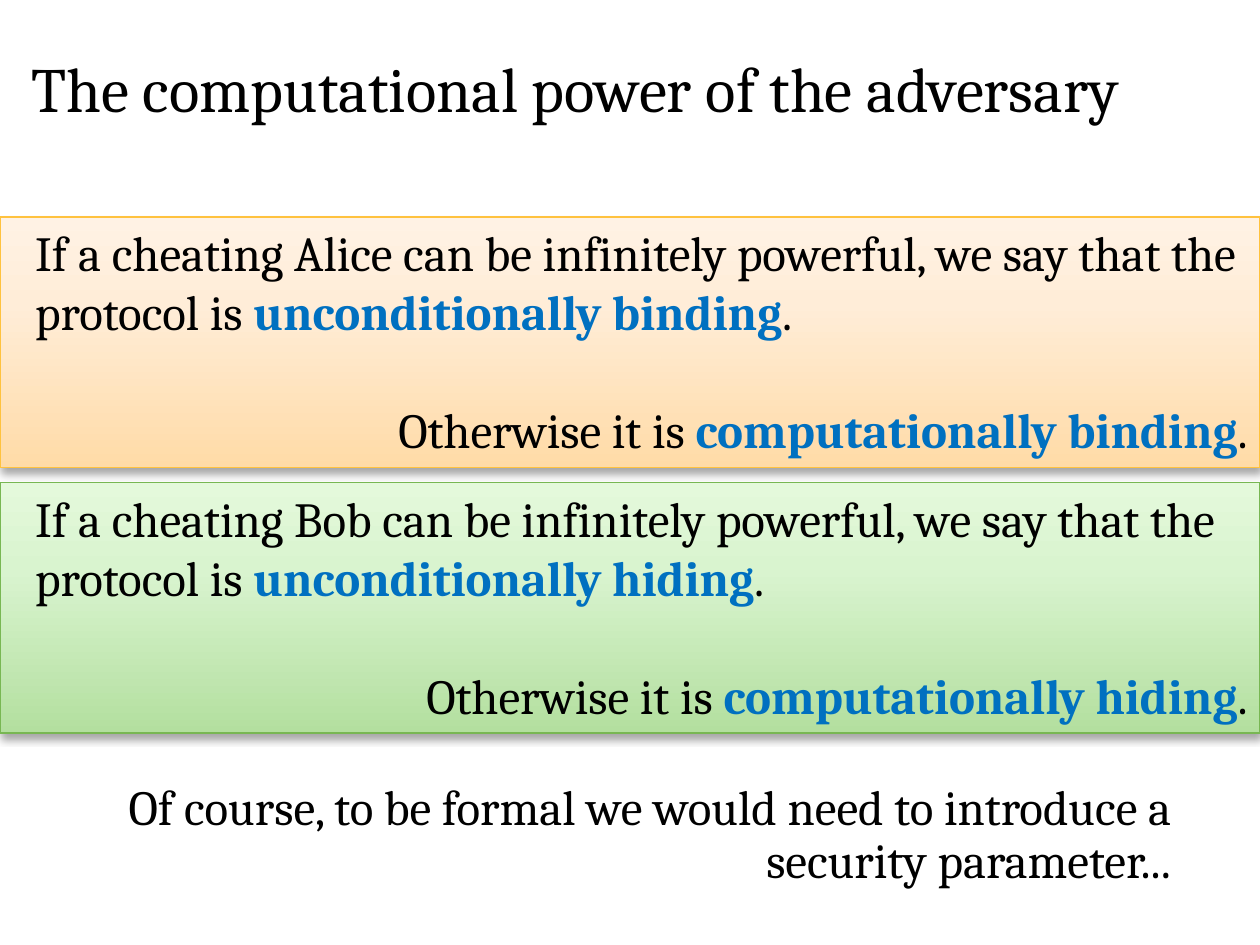
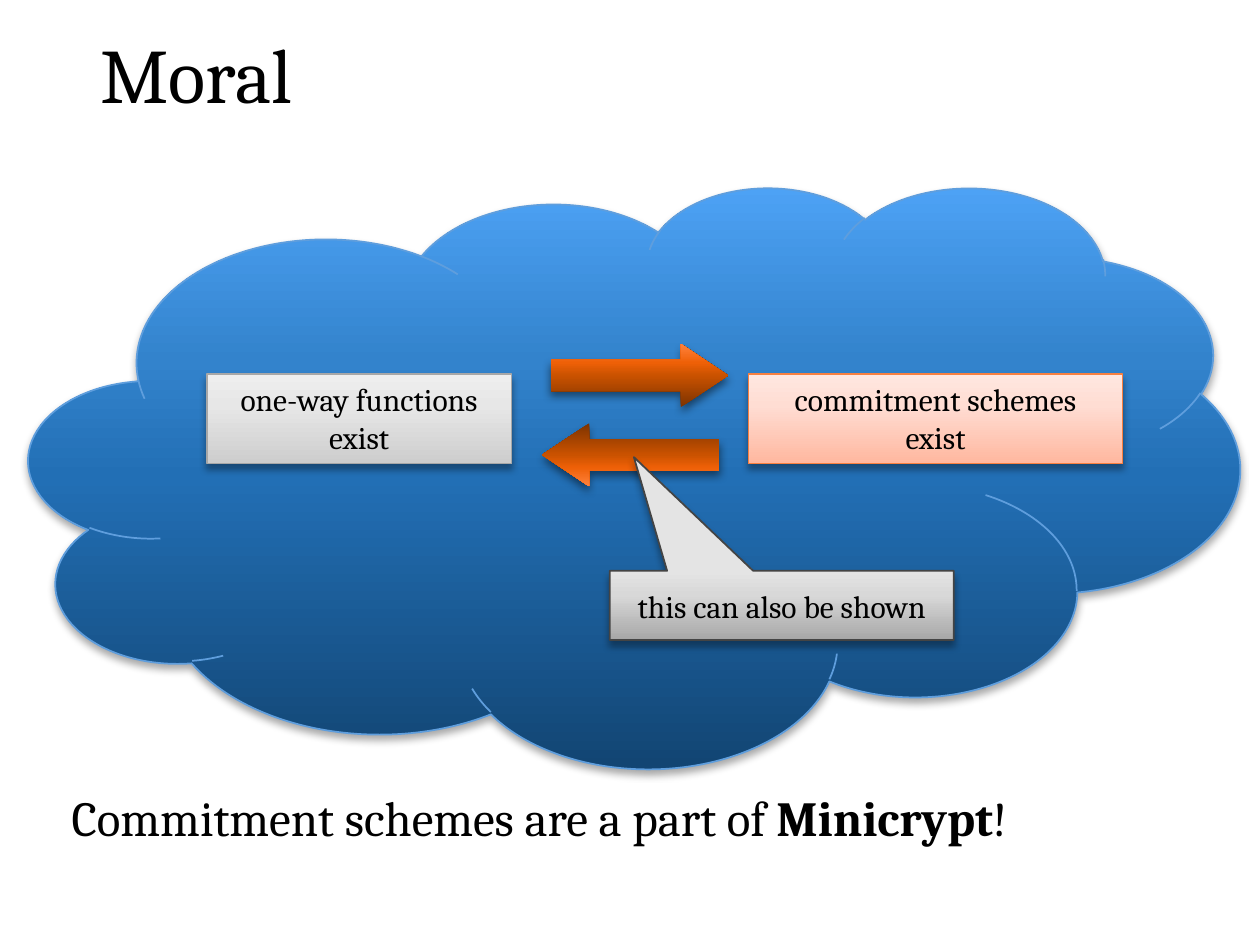
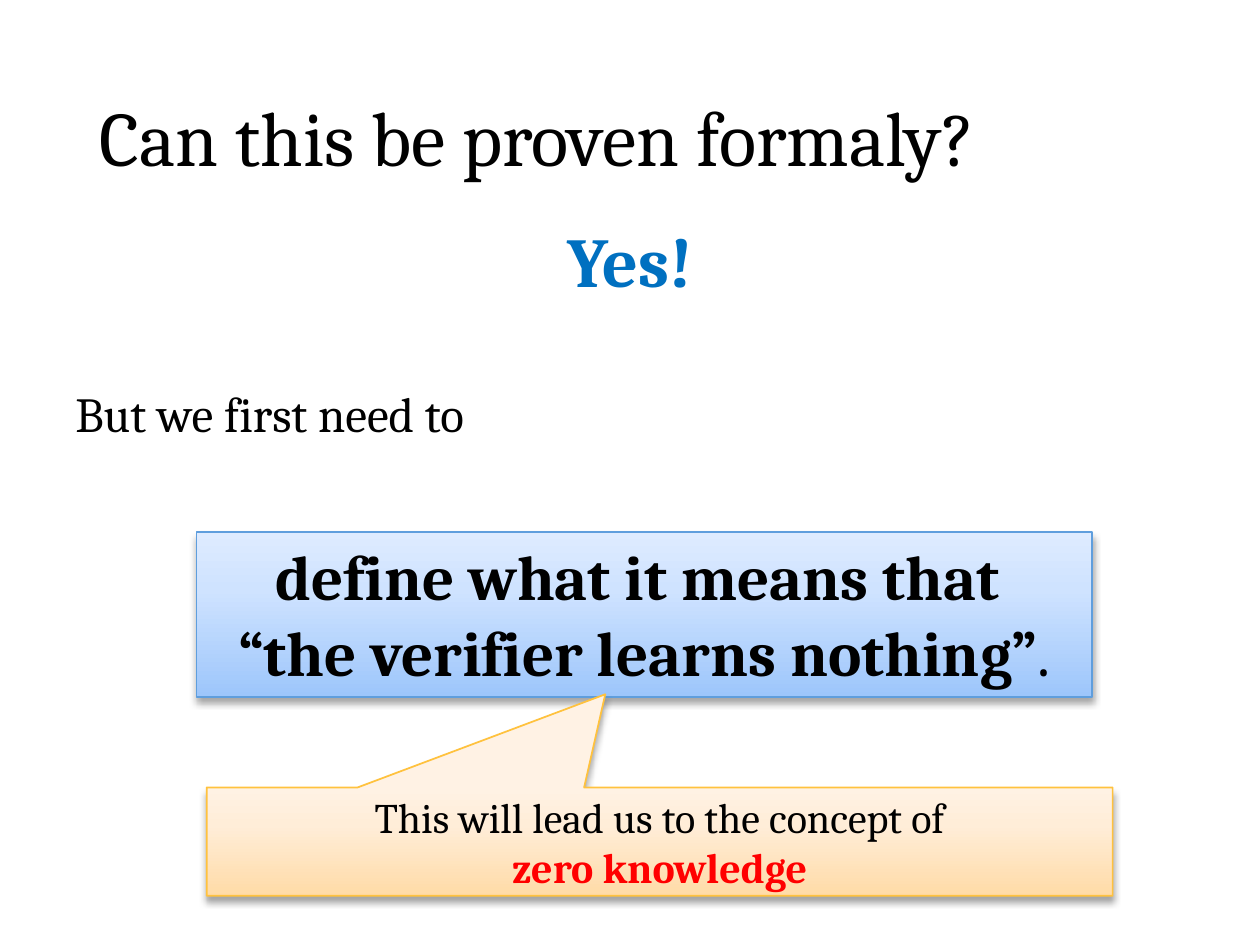
from lxml import etree
from pptx import Presentation, util as u
from pptx.dml.color import RGBColor
from pptx.enum import shapes, text
from pptx.oxml.ns import qn

# Grid of 100 columns by 75 rows on a 10 x 7.5 inch slide
COLS, ROWS = 100, 75
CELL = u.Inches(10) // COLS

FONT = "Cambria"
BLACK, BLUE, RED = "000000", "0070C0", "FF0000"

# Gradient colours run from the bottom up to the top
TINT_STOPS, DEEP_STOPS = (0, 65, 100), (0, 50, 70, 100)
ORANGE = dict(colors=("FFDBA7", "FFEDD8", "FFF2E4"), line="FFC23E")
GREEN = dict(colors=("B3DF9F", "D9F4CF", "E4F9DB"), line="78B753")
GREY = dict(colors=("CDCDCD", "E7E7E7", "EEEEEE"), line="A7A7A7")
DARK_GREY = dict(colors=("A7A7A7", "D8D8D8", "E4E4E4"), line="444444")
SALMON = dict(colors=("FFB79F", "FFDDD3", "FFE7E0"), line="F88040")
SKY = dict(colors=("9DC6FB", "CFE3FF", "DEEBFF"), line="5F9EDD")
DEEP_BLUE = dict(colors=("124573", "226FB5", "3383CC", "4DA2F5"), line="5F9EDD")
DEEP_ORANGE = dict(colors=("7D3300", "CA5200", "EE6007", "FF823D"), line=None)

LEFT, CENTER, RIGHT = text.PP_ALIGN.LEFT, text.PP_ALIGN.CENTER, text.PP_ALIGN.RIGHT
TOP, MIDDLE = text.MSO_ANCHOR.TOP, text.MSO_ANCHOR.MIDDLE
SHAPE = shapes.MSO_SHAPE


def rgb(value):
    return RGBColor.from_string(value)


def grid(*cells):
    return [round(c * CELL) for c in cells]


def child(parent, tag, **attrs):
    return etree.SubElement(parent, qn(tag), {k: str(v) for k, v in attrs.items()})


def write(p, words, size=28, color=BLACK, bold=False):
    """Add a run; a newline in the words becomes a line break."""
    for i, line in enumerate(words.split("\n")):
        if i:
            p.add_line_break()
        if line:
            r = p.add_run()
            r.text = line
            r.font.name, r.font.size, r.font.bold = FONT, u.Pt(size), bold
            r.font.color.rgb = rgb(color)


def paragraph(tf, *runs, align=LEFT, before=0, spacing=1.0, **fmt):
    """Add a paragraph; each run is a string or (string, own format)."""
    p = tf.paragraphs[0]
    if p.runs:
        p = tf.add_paragraph()
    p.alignment, p.line_spacing, p.space_before = align, spacing, u.Pt(before)
    for run in runs:
        words, own = (run, {}) if isinstance(run, str) else run
        write(p, words, **{**fmt, **own})


def strong(words, color=BLACK):
    return words, dict(bold=True, color=color)


def text_box(s, at, anchor=TOP):
    tf = s.shapes.add_textbox(*grid(*at)).text_frame
    tf.word_wrap, tf.vertical_anchor = True, anchor
    return tf


def title(s, at, words, size=44):
    paragraph(text_box(s, at, MIDDLE), words, size=size, spacing=0.9)


def body(s, at, *runs, **fmt):
    tf = text_box(s, at)
    paragraph(tf, *runs, before=10, spacing=0.9, **fmt)
    return tf


def paint(sp, colors, line):
    """Vertical gradient, followed by the outline."""
    sp.fill.background()
    grad = etree.Element(qn("a:gradFill"), rotWithShape="1")
    stops = child(grad, "a:gsLst")
    for pos, color in zip(TINT_STOPS if len(colors) == 3 else DEEP_STOPS, colors):
        child(child(stops, "a:gs", pos=pos * 1000), "a:srgbClr", val=color)
    child(grad, "a:lin", ang=270 * 60000, scaled=0)
    pr = sp._element.spPr
    pr.replace(pr.find(qn("a:noFill")), grad)
    if line:
        sp.line.color.rgb, sp.line.width = rgb(line), u.Pt(1)
    else:
        sp.line.fill.background()


def cast_shadow(sp, blur, alpha):
    sp.shadow.inherit = False
    effects = sp._element.spPr.find(qn("a:effectLst"))
    shadow = child(effects, "a:outerShdw", blurRad=u.Pt(blur), dist=u.Pt(3),
                   dir=90 * 60000, rotWithShape=0)
    child(child(shadow, "a:srgbClr", val=BLACK), "a:alpha", val=alpha * 1000)


def block(s, kind, at, style, adjust=(), blur=4, alpha=35):
    sp = s.shapes.add_shape(kind, *grid(*at))
    for i, value in enumerate(adjust):
        sp.adjustments[i] = value
    paint(sp, **style)
    cast_shadow(sp, blur, alpha)
    sp.text_frame.word_wrap = True
    return sp


def panel(s, at, style):
    tf = block(s, SHAPE.RECTANGLE, at, style).text_frame
    tf.vertical_anchor = TOP
    tf.auto_size = text.MSO_AUTO_SIZE.SHAPE_TO_FIT_TEXT
    return tf


def callout(s, at, style, tip, *runs, size):
    sp = block(s, SHAPE.RECTANGULAR_CALLOUT, at, style, tip)
    sp.text_frame.vertical_anchor = MIDDLE
    paragraph(sp.text_frame, *runs, align=CENTER, size=size)


def arrow(s, left, top, rotation=0):
    sp = block(s, SHAPE.RIGHT_ARROW, (left, top, 14.1, 5), DEEP_ORANGE,
               (0.5, 0.75), blur=5, alpha=45)
    sp.rotation = rotation


def power_slide(s):
    title(s, (1.5, 3, 97.1, 8.7), "The computational power of the adversary", size=36)
    body(s, (3.9, 61.7, 90, 9.7),
         "Of course, to be formal we would need to introduce a security parameter...",
         align=RIGHT)
    # One full-width band for each cheating party
    bands = (("Alice", "binding", ORANGE), ("Bob", "hiding", GREEN))
    for i, (party, goal, style) in enumerate(bands):
        tf = panel(s, (0, 17.2 + 21.1 * i, COLS, 19.9), style)
        tf.margin_left = u.Inches(0.28)
        paragraph(tf, f"If a cheating {party} can be infinitely powerful, "
                  "we say that the protocol is ",
                  strong(f"unconditionally {goal}", BLUE), ".")
        paragraph(tf, "Otherwise it is ", strong(f"computationally {goal}", BLUE), ".",
                  align=RIGHT, before=33.7)


def moral_slide(s):
    block(s, SHAPE.CLOUD, (2.3, 14.8, 96.1, 46.1), DEEP_BLUE)
    title(s, (7, 0, 90, 12.5), "Moral")
    body(s, (4.7, 62.5, 90, 8.1),
         "Commitment schemes are a part of ", strong("Minicrypt"), "!")
    # Two equivalent statements, with an arrow each way
    arrow(s, 43.7, 27.3)
    statements = ((16.4, 24.2, "one-way functions", GREY),
                  (59.4, 29.7, "commitment schemes", SALMON))
    for left, width, words, style in statements:
        tf = panel(s, (left, 29.7, width, 7.1), style)
        for line in (words, "exist"):
            paragraph(tf, line, align=CENTER, size=18)
    arrow(s, 43, 33.6, rotation=180)
    callout(s, (48.4, 45.3, 27.3, 5.5), DARK_GREY, (-0.43, -2.14),
            "this can also be shown", size=18)


def proof_slide(s):
    title(s, (6.9, 4, 86.2, 14.5), "Can this be proven formaly?")
    tf = body(s, (5, 17.5, 90, 22.3), strong("Yes!", BLUE), align=CENTER, size=40)
    paragraph(tf, "But we first need to", before=50, spacing=0.9)
    # The definition, and where it leads
    tf = panel(s, (15.6, 42.2, 71.1, 13.1), SKY)
    paragraph(tf, strong("define what it means that \n“the verifier learns nothing”"),
              ".", align=CENTER, size=36)
    callout(s, (16.4, 62.5, 71.9, 8.6), ORANGE, (-0.06, -1.36),
            "This will lead us to the concept of\n", strong("zero knowledge", RED),
            size=24)


def main():
    prs = Presentation()
    prs.slide_width, prs.slide_height = COLS * CELL, ROWS * CELL
    for build in (power_slide, moral_slide, proof_slide):
        build(prs.slides.add_slide(prs.slide_layouts[6]))
    prs.save("out.pptx")


if __name__ == "__main__":
    main()
